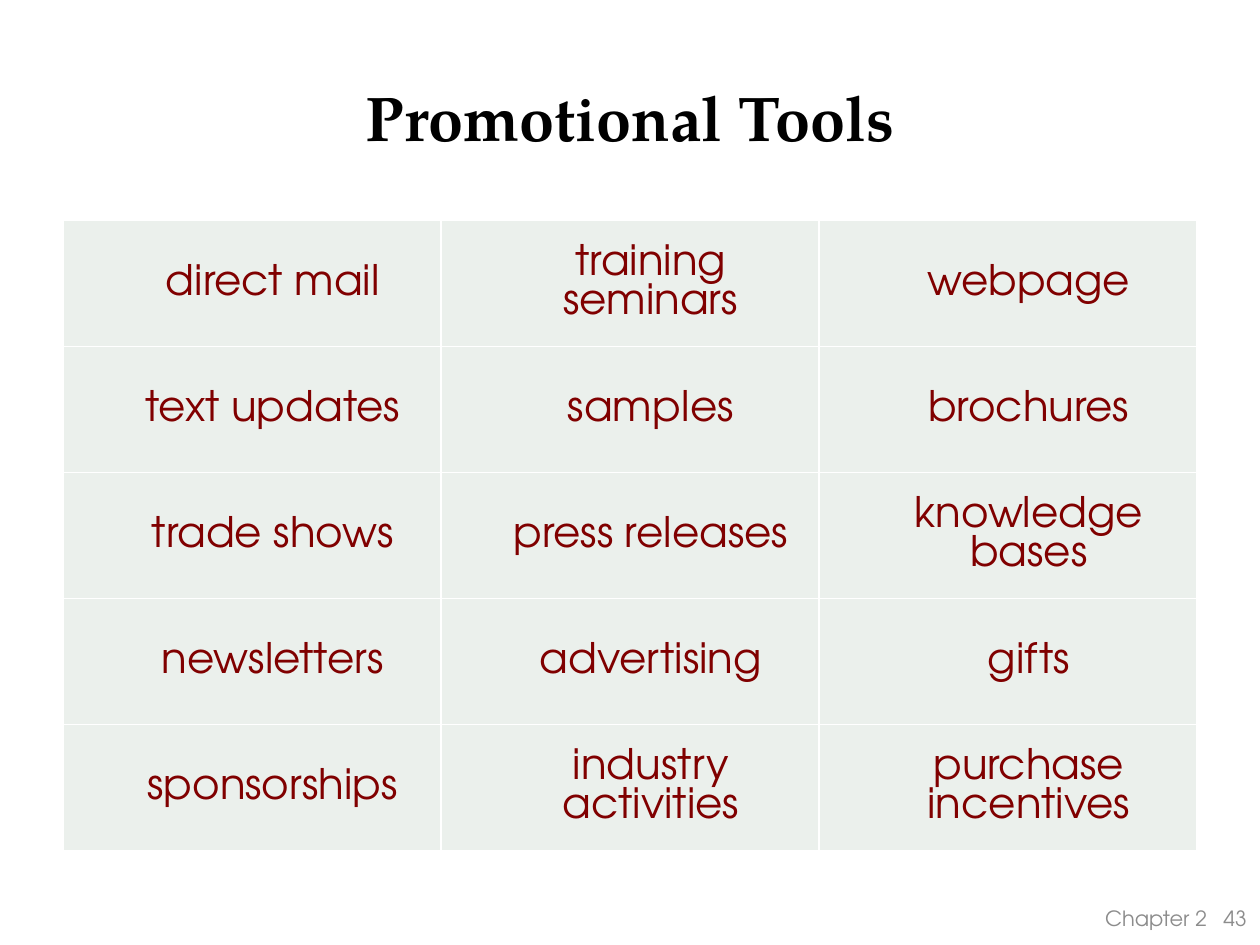
from dataclasses import dataclass

from lxml.etree import SubElement
from pptx import Presentation
from pptx.dml.color import RGBColor as Rgb
from pptx.enum.text import MSO_ANCHOR as Anchor, PP_ALIGN as Align
from pptx.oxml.ns import qn
from pptx.util import Inches, Pt


@dataclass(frozen=True)
class Theme:
    heading_font: str = "TeX Gyre Pagella"
    body_font: str = "TeX Gyre Adventor"
    title_color: str = "000000"
    tool_color: str = "800000"
    footer_color: str = "8C8C8C"
    cell_color: str = "EBF0EC"
    border_color: str = "FFFFFF"
    title_size: int = 36
    tool_size: int = 24
    footer_size: int = 12


TOOLS = [
    ["direct mail", "training seminars", "webpage"],
    ["text updates", "samples", "brochures"],
    ["trade shows", "press releases", "knowledge bases"],
    ["newsletters", "advertising", "gifts"],
    ["sponsorships", "industry activities", "purchase incentives"],
]


def write(frame, text, *, font, size, color, bold=False, align=Align.CENTER,
          indent=0, tab=None):
    """Fill the frame with one formatted paragraph; indent and tab are in inches."""
    frame.word_wrap = True
    frame.vertical_anchor = Anchor.MIDDLE
    para = frame.paragraphs[0]
    para.alignment = align
    properties = para._p.get_or_add_pPr()
    if indent:
        properties.set("marL", str(Inches(indent)))
        properties.set("indent", "0")
    if tab:
        tabs = SubElement(properties, qn("a:tabLst"))
        SubElement(tabs, qn("a:tab"), pos=str(Inches(tab)), algn="l")
    span = para.add_run()
    span.text = text
    span.font.name = font
    span.font.size = Pt(size)
    span.font.bold = bold
    span.font.color.rgb = Rgb.from_string(color)


class SlideBuilder:
    def __init__(self, deck, theme):
        self.theme = theme
        self.slide = deck.slides.add_slide(deck.slide_layouts[5])

    def title(self, text, left, top, width, height):
        box = self.slide.shapes.title
        box.left, box.top = Inches(left), Inches(top)
        box.width, box.height = Inches(width), Inches(height)
        write(box.text_frame, text, font=self.theme.heading_font, bold=True,
              size=self.theme.title_size, color=self.theme.title_color)

    def footer(self, text, left, top, width, height):
        box = self.slide.shapes.add_textbox(
            Inches(left), Inches(top), Inches(width), Inches(height))
        box.text_frame.margin_left = Inches(1.19)
        box.text_frame.margin_right = 0
        write(box.text_frame, text, font=self.theme.body_font, align=Align.LEFT,
              size=self.theme.footer_size, color=self.theme.footer_color, tab=0.94)

    def table(self, rows, left, top, width, height):
        frame = self.slide.shapes.add_table(
            len(rows), len(rows[0]),
            Inches(left), Inches(top), Inches(width), Inches(height))
        grid = frame.table
        grid.first_row = grid.horz_banding = False
        for r, row in enumerate(rows):
            for c, text in enumerate(row):
                self.cell(grid.cell(r, c), text)

    def cell(self, cell, text):
        cell.margin_left = cell.margin_top = cell.margin_bottom = 0
        cell.margin_right = Inches(0.05)
        write(cell.text_frame, text, font=self.theme.body_font, indent=0.38,
              size=self.theme.tool_size, color=self.theme.tool_color)
        cell.vertical_anchor = Anchor.MIDDLE
        self.borders(cell)
        cell.fill.solid()
        cell.fill.fore_color.rgb = Rgb.from_string(self.theme.cell_color)

    def borders(self, cell):
        properties = cell._tc.get_or_add_tcPr()
        for side in ("L", "R", "T", "B"):
            line = SubElement(properties, qn(f"a:ln{side}"), w=str(Pt(1)))
            fill = SubElement(line, qn("a:solidFill"))
            SubElement(fill, qn("a:srgbClr"), val=self.theme.border_color)


def main():
    deck = Presentation()
    deck.slide_width, deck.slide_height = Inches(10), Inches(7.5)
    builder = SlideBuilder(deck, Theme())
    builder.title("Promotional Tools", 0.5, 0.3, 9, 1.25)
    builder.table(TOOLS, 0.5, 1.75, 9, 5)
    builder.footer("Chapter 2\t43", 7.58, 7.08, 2.42, 0.42)
    deck.save("out.pptx")


if __name__ == "__main__":
    main()
